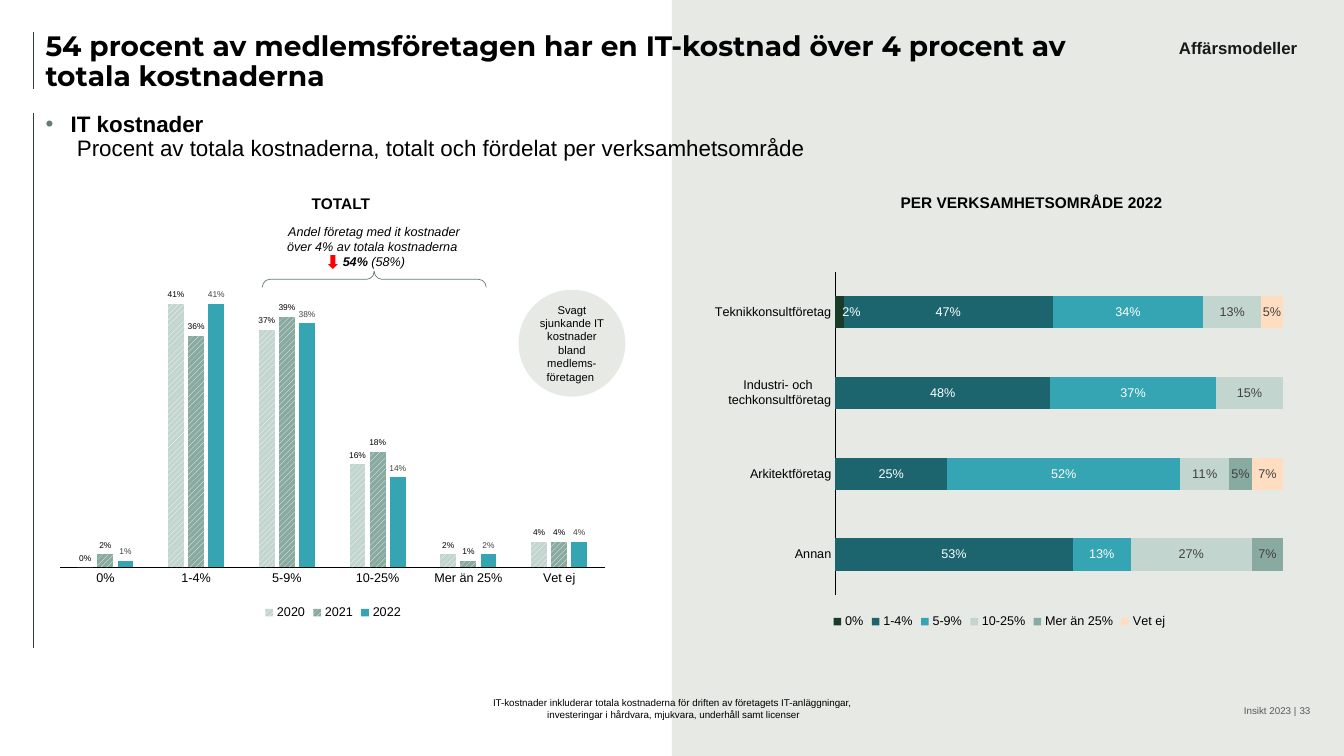
from copy import deepcopy
from lxml.etree import SubElement
from pptx import Presentation
from pptx.chart.data import CategoryChartData
from pptx.dml.color import RGBColor
from pptx.enum.chart import XL_CHART_TYPE, XL_LABEL_POSITION, XL_LEGEND_POSITION, XL_TICK_MARK
from pptx.enum.dml import MSO_PATTERN
from pptx.enum.shapes import MSO_CONNECTOR, MSO_SHAPE
from pptx.enum.text import MSO_ANCHOR, PP_ALIGN
from pptx.oxml import parse_xml
from pptx.oxml.ns import nsdecls, qn
from pptx.util import Pt

BLACK = RGBColor(0x00, 0x00, 0x00)
WHITE = RGBColor(0xFF, 0xFF, 0xFF)
INK = RGBColor(0x19, 0x19, 0x19)
RULE = RGBColor(0x32, 0x3E, 0x39)
GREY = RGBColor(0x59, 0x59, 0x59)
LABEL_GREY = RGBColor(0x40, 0x40, 0x40)
PANEL = RGBColor(0xE7, 0xE9, 0xE4)
MOSS = RGBColor(0x65, 0x7B, 0x71)
RED = RGBColor(0xFF, 0x00, 0x00)
FOREST = RGBColor(0x19, 0x3C, 0x28)
PETROL = RGBColor(0x1C, 0x65, 0x6E)
TEAL = RGBColor(0x35, 0xA5, 0xB4)
MIST = RGBColor(0xC3, 0xD5, 0xCF)
SAGE = RGBColor(0x88, 0xAA, 0xA0)
PEACH = RGBColor(0xFF, 0xDD, 0xC1)


def place(box, left, top, width, height):
    """Lengths of a part inside a box, as Pt values."""
    return Pt(box[0] + left), Pt(box[1] + top), Pt(width), Pt(height)


def fill_text(shape, paragraphs, size, color=BLACK, font="Arial", align=PP_ALIGN.CENTER,
              anchor=MSO_ANCHOR.TOP, insets=(7.2, 3.6), spacing=None):
    """Each paragraph is a list of (text, bold, italic) runs; "\n" is a line break."""
    frame = shape.text_frame
    frame.word_wrap = True
    frame.vertical_anchor = anchor
    frame.margin_left = frame.margin_right = Pt(insets[0])
    frame.margin_top = frame.margin_bottom = Pt(insets[1])
    for index, runs in enumerate(paragraphs):
        paragraph = frame.add_paragraph() if index else frame.paragraphs[0]
        paragraph.alignment = align
        paragraph.line_spacing = spacing
        for text, bold, italic in runs:
            if text == "\n":
                # The break takes the size of the run before it
                paragraph.add_line_break()
                paragraph._p[-1].append(deepcopy(run._r.rPr))
                continue
            run = paragraph.add_run()
            run.text = text
            run.font.name, run.font.size = font, Pt(size)
            run.font.bold, run.font.italic = bold, italic
            run.font.color.rgb = color


def add_text(slide, position, paragraphs, size, **options):
    fill_text(slide.shapes.add_textbox(*position), paragraphs, size, **options)


def add_shape(slide, kind, position, fill=None, line=None):
    shape = slide.shapes.add_shape(kind, *position)
    shape.shadow.inherit = False
    if fill is None:
        shape.fill.background()
    else:
        shape.fill.solid()
        shape.fill.fore_color.rgb = fill
    if line is None:
        shape.line.fill.background()
    else:
        shape.line.color.rgb = line
        shape.line.width = Pt(0.5)
    return shape


def add_rule(slide, left, top, bottom):
    rule = slide.shapes.add_connector(MSO_CONNECTOR.STRAIGHT, Pt(left), Pt(top), Pt(left), Pt(bottom))
    rule.line.color.rgb = RULE
    rule.line.width = Pt(0.5)
    SubElement(rule._element.spPr, qn("a:effectLst"))


def manual_layout(values, inner=False):
    target = '<c:layoutTarget val="inner"/><c:xMode val="edge"/><c:yMode val="edge"/>' if inner else ""
    parts = "".join(f'<c:{key} val="{value}"/>' for key, value in zip("xywh", values))
    return parse_xml(f'<c:layout {nsdecls("c")}><c:manualLayout>{target}{parts}'
                     '</c:manualLayout></c:layout>')


def add_chart(slide, kind, position, categories, series_rows, plot_area, maximum,
              gap, overlap, label_size, label_position):
    """Series rows are (name, values, colour, label colour, hatched); plot_area is in points."""
    data = CategoryChartData(number_format="0%")
    data.categories = categories
    for name, values, *_ in series_rows:
        data.add_series(name, values)
    chart = slide.shapes.add_chart(kind, *position, data).chart
    chart.has_title = False
    chart.font.name, chart.font.size = "Arial", Pt(10)
    chart.font.color.rgb = BLACK
    chart._chartSpace.find(qn("c:txPr")).addprevious(parse_xml(
        f'<c:spPr {nsdecls("c", "a")}><a:noFill/><a:ln><a:noFill/></a:ln></c:spPr>'))

    # Axes and legend
    chart.value_axis.visible = False
    chart.value_axis.has_major_gridlines = False
    chart.value_axis.minimum_scale, chart.value_axis.maximum_scale = 0, maximum
    axis = chart.category_axis
    axis.major_tick_mark = axis.minor_tick_mark = XL_TICK_MARK.NONE
    axis.format.line.color.rgb = BLACK
    axis.format.line.width = Pt(0.75)
    chart.has_legend = True
    chart.legend.position = XL_LEGEND_POSITION.BOTTOM
    chart.legend.include_in_layout = False
    for font in (axis.tick_labels.font, chart.legend.font):
        font.name, font.size = "Arial", Pt(9)
        font.color.rgb = BLACK

    # Bars and their labels
    plot = chart.plots[0]
    plot.gap_width, plot.overlap, plot.vary_by_categories = gap, overlap, False
    for series, (_, _, color, label_color, hatched) in zip(plot.series, series_rows):
        fill = series.format.fill
        if hatched:
            fill.patterned()
            fill.pattern = MSO_PATTERN.WIDE_UPWARD_DIAGONAL
            fill.fore_color.rgb, fill.back_color.rgb = WHITE, color
        else:
            fill.solid()
            fill.fore_color.rgb = color
        labels = series.data_labels
        labels.show_value = True
        labels.position = label_position
        labels.number_format, labels.number_format_is_linked = "0%", False
        labels.font.name, labels.font.size = "Arial", Pt(label_size)
        labels.font.color.rgb = label_color
    area = chart._chartSpace.chart.plotArea
    for layout in area.findall(qn("c:layout")):
        area.remove(layout)
    width, height = position[2:]
    fractions = [Pt(length) / whole for length, whole in zip(plot_area, (width, height) * 2)]
    area.insert(0, manual_layout(fractions, inner=True))
    return chart


def hide_zero_labels(series):
    labels = series.data_labels._element
    zeros = [index for index, value in enumerate(series.values) if value == 0]
    for index in reversed(zeros):
        labels.insert(0, parse_xml(f'<c:dLbl {nsdecls("c")}><c:idx val="{index}"/>'
                                   '<c:delete val="1"/></c:dLbl>'))


def add_header(slide, box):
    add_rule(slide, box[0] + 24, box[1] + 23, box[1] + 63.5)
    add_rule(slide, box[0] + 24, box[1] + 80.6, box[1] + 463)
    add_text(slide, place(box, 833, 23.4, 103, 21.6), [[("Affärsmodeller", True, False)]], 12, color=INK)
    add_text(slide, place(box, 32.5, 23, 766, 40.5),
             [[("54 procent av medlemsföretagen har en IT-kostnad över 4 procent av totala kostnaderna",
                True, False)]],
             20, font="Montserrat", align=PP_ALIGN.LEFT, insets=(0, 0), spacing=0.9)
    subject = slide.shapes.add_textbox(*place(box, 32.5, 80.6, 688, 47))
    properties = subject.text_frame.paragraphs[0]._p.get_or_add_pPr()
    properties.set("marL", str(Pt(18)))
    properties.set("indent", str(-Pt(18)))
    bullet_color = SubElement(properties, qn("a:buClr"))
    SubElement(bullet_color, qn("a:srgbClr"), val=str(MOSS))
    SubElement(properties, qn("a:buFont"), typeface="Arial")
    SubElement(properties, qn("a:buChar"), char="•")
    fill_text(subject, [[("IT kostnader", True, False), ("\n", False, False),
                         (" Procent av totala kostnaderna, totalt och fördelat per verksamhetsområde",
                          False, False)]],
              16, align=PP_ALIGN.LEFT, insets=(0, 0), spacing=0.9)


def add_total(slide, box):
    add_text(slide, place(box, 206, 135, 75, 21), [[("TOTALT", True, False)]], 11)
    # Bracketed share above four percent
    brace = add_shape(slide, MSO_SHAPE.RIGHT_BRACE, place(box, 261.6, 119.5, 11.5, 160), line=MOSS)
    brace.rotation = 270
    brace.adjustments[0] = 0.47
    add_text(slide, place(box, 197.6, 156.2, 139, 40.3),
             [[("Andel företag med it kostnader över 4% av totala kostnaderna ", False, True)],
              [("54% ", True, True), ("(58%)", False, True)]], 9)
    add_shape(slide, MSO_SHAPE.DOWN_ARROW, place(box, 234.2, 182.2, 7.2, 10), fill=RED)
    # Comment bubble
    bubble = add_shape(slide, MSO_SHAPE.OVAL, place(box, 370.4, 207, 76.3, 76.3), fill=PANEL)
    fill_text(bubble, [[("Svagt sjunkande IT kostnader bland medlems-företagen ", False, False)]],
              8, anchor=MSO_ANCHOR.MIDDLE, insets=(0, 3.6))
    add_chart(slide, XL_CHART_TYPE.COLUMN_CLUSTERED, place(box, 35.3, 193.7, 405.4, 252),
              ["0%", "1-4%", "5-9%", "10-25%", "Mer än 25%", "Vet ej"],
              [("2020", (0, 0.41, 0.37, 0.16, 0.02, 0.04), MIST, BLACK, True),
               ("2021", (0.02, 0.36, 0.39, 0.18, 0.01, 0.04), SAGE, BLACK, True),
               ("2022", (0.01, 0.41, 0.38, 0.14, 0.02, 0.04), TEAL, LABEL_GREY, False)],
              (7.6, 5, 389, 206.6), 0.45, 219, -27, 6, XL_LABEL_POSITION.OUTSIDE_END)


def add_by_area(slide, box):
    add_text(slide, place(box, 153.6, 134.6, 206.6, 21), [[("PER VERKSAMHETSOMRÅDE 2022", True, False)]], 11)
    chart = add_chart(
        slide, XL_CHART_TYPE.BAR_STACKED_100, place(box, 22.6, 189.4, 422.6, 262.8),
        ["Teknikkonsultföretag", "Industri- och \ntechkonsultföretag", "Arkitektföretag", "Annan"],
        [("0%", (0.02, 0, 0, 0), FOREST, WHITE, False),
         ("1-4%", (0.47, 0.48, 0.25, 0.53), PETROL, WHITE, False),
         ("5-9%", (0.34, 0.37, 0.52, 0.13), TEAL, WHITE, False),
         ("10-25%", (0.13, 0.15, 0.11, 0.27), MIST, LABEL_GREY, False),
         ("Mer än 25%", (0, 0, 0.05, 0.07), SAGE, LABEL_GREY, False),
         ("Vet ej", (0.05, 0, 0.07, 0), PEACH, LABEL_GREY, False)],
        (94, 4.7, 320, 231), 1, 150, 100, 9, XL_LABEL_POSITION.CENTER)
    chart.category_axis.reverse_order = True
    for series in chart.plots[0].series:
        hide_zero_labels(series)
    # The narrow first bar has its label beside it
    label = chart.plots[0].series[0].points[0].data_label
    label.position = XL_LABEL_POSITION.CENTER
    label.font.name, label.font.size = "Arial", Pt(9)
    label.font.color.rgb = WHITE
    element = chart.plots[0].series[0]._element.find(".//" + qn("c:dLbl"))
    element.insert(1, manual_layout((0.02, 0)))


def add_footer(slide, box):
    for left, width, text in ((602, 324, "Insikt 2023 |"), (720, 216, "33")):
        add_text(slide, place(box, left, 5, width, 13), [[(text, False, False)]], 7, color=GREY,
                 align=PP_ALIGN.RIGHT, anchor=MSO_ANCHOR.BOTTOM, insets=(0, 0))
    add_text(slide, place(box, 324, 0, 312, 26.6),
             [[("IT-kostnader inkluderar totala kostnaderna för driften av företagets IT-anläggningar,",
                False, False), ("\n", False, False),
               (" investeringar i hårdvara, mjukvara, underhåll samt licenser", False, False)]], 7)


def main():
    presentation = Presentation()
    presentation.slide_width, presentation.slide_height = Pt(960), Pt(540)
    slide = presentation.slides.add_slide(presentation.slide_layouts[6])
    add_shape(slide, MSO_SHAPE.RECTANGLE, (Pt(480), Pt(0), Pt(480), Pt(540)), fill=PANEL)
    add_header(slide, (0, 0))
    add_total(slide, (0, 0))
    add_by_area(slide, (480, 0))
    add_footer(slide, (0, 494))
    presentation.save("out.pptx")


if __name__ == "__main__":
    main()
